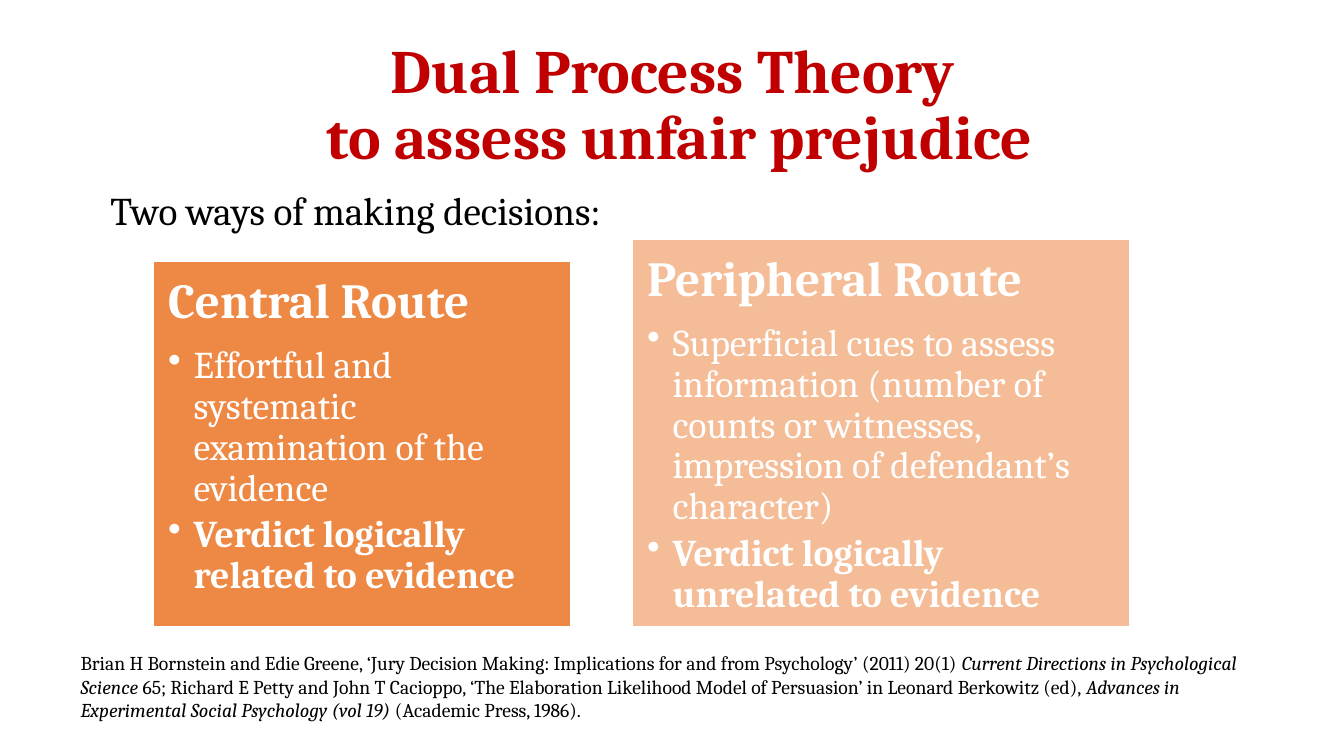
from pptx import Presentation
from pptx.dml.color import RGBColor
from pptx.enum.shapes import MSO_SHAPE as Shape
from pptx.enum.text import MSO_ANCHOR as Anchor, PP_ALIGN as Align
from pptx.oxml.ns import qn
from pptx.util import Cm, Pt
from lxml.etree import SubElement as Sub


def rgb(code):
    return RGBColor.from_string(code)


class Deck:
    face = "Cambria"
    red, black, white, tint = "C00000", "000000", "FFFFFF", "ED7D31"

    def __init__(self):
        self.prs = Presentation()
        self.prs.slide_width, self.prs.slide_height = Cm(33.87), Cm(19.05)
        self.slide = self.prs.slides.add_slide(self.prs.slide_layouts[5])

    def style(self, para, size, color, bold=False):
        for run in para.runs:
            font = run.font
            font.name, font.size, font.bold = self.face, Pt(size), bold
            font.color.rgb = rgb(color)

    def title(self, text, box):
        head = self.slide.shapes.title
        head.left, head.top, head.width, head.height = map(Cm, box)
        frame = head.text_frame
        frame.text = text
        frame.vertical_anchor = Anchor.MIDDLE
        para = frame.paragraphs[0]
        para.alignment, para.line_spacing = Align.CENTER, 0.9
        self.style(para, 44, self.red, True)

    def text(self, parts, box, size, space=1.0):
        frame = self.slide.shapes.add_textbox(*map(Cm, box)).text_frame
        frame.word_wrap = True
        para = frame.paragraphs[0]
        para.line_spacing = space
        for words, slant in parts:
            run = para.add_run()
            run.text, run.font.italic = words, slant
        self.style(para, size, self.black)

    def bullet(self, para):
        props = para._p.get_or_add_pPr()
        props.set("marL", str(Cm(0.64)))
        props.set("indent", str(-Cm(0.64)))
        Sub(props, qn("a:buChar")).set("char", "•")

    def card(self, lines, box, alpha):
        card = self.slide.shapes.add_shape(Shape.RECTANGLE, *map(Cm, box))
        card.shadow.inherit = False
        card.fill.solid()
        card.fill.fore_color.rgb = rgb(self.tint)
        color = card.fill._xPr.find(qn("a:solidFill"))[0]
        Sub(color, qn("a:alpha")).set("val", str(alpha * 1000))
        card.line.color.rgb, card.line.width = rgb(self.white), Pt(1.5)
        frame = card.text_frame
        frame.word_wrap, frame.vertical_anchor = True, Anchor.TOP
        frame.margin_left = frame.margin_right = Cm(0.38)
        frame.margin_top = frame.margin_bottom = Cm(0.38)
        frame.text = "\n".join(lines)
        for row, para in enumerate(frame.paragraphs):
            if row:
                self.bullet(para)
            para.alignment, para.line_spacing = Align.LEFT, 0.9
            para.space_after = Pt(4 if row else 12)
            self.style(para, 27 if row else 35, self.white, row != 1)


def main():
    deck = Deck()
    deck.title("Dual Process Theory \vto assess unfair prejudice",
               (0.41, 0.84, 33.45, 3.68))
    deck.text([("Two ways of making decisions:", False)],
              (2.53, 4.7, 20, 1.4), 28, 0.9)
    deck.card(["Central Route",
               "Effortful and systematic examination of the evidence",
               "Verdict logically related to evidence"],
              (3.86, 6.58, 10.54, 9.22), 90)
    deck.card(["Peripheral Route",
               "Superficial cues to assess information (number of counts or "
               "witnesses, impression of defendant’s character)",
               "Verdict logically unrelated to evidence"],
              (15.93, 6.02, 12.55, 9.78), 50)
    deck.text([
        ("Brian H Bornstein and Edie Greene, ‘Jury Decision Making: "
         "Implications for and from Psychology’ (2011) 20(1) ", False),
        ("Current Directions in Psychological Science ", True),
        ("65; Richard E Petty and John T Cacioppo, ‘The Elaboration "
         "Likelihood Model of Persuasion’ in Leonard Berkowitz (ed), ", False),
        ("Advances in Experimental Social Psychology (vol 19)", True),
        (" (Academic Press, 1986).", False),
    ], (1.78, 16.28, 30.12, 2.06), 14)
    deck.prs.save("out.pptx")


if __name__ == "__main__":
    main()
